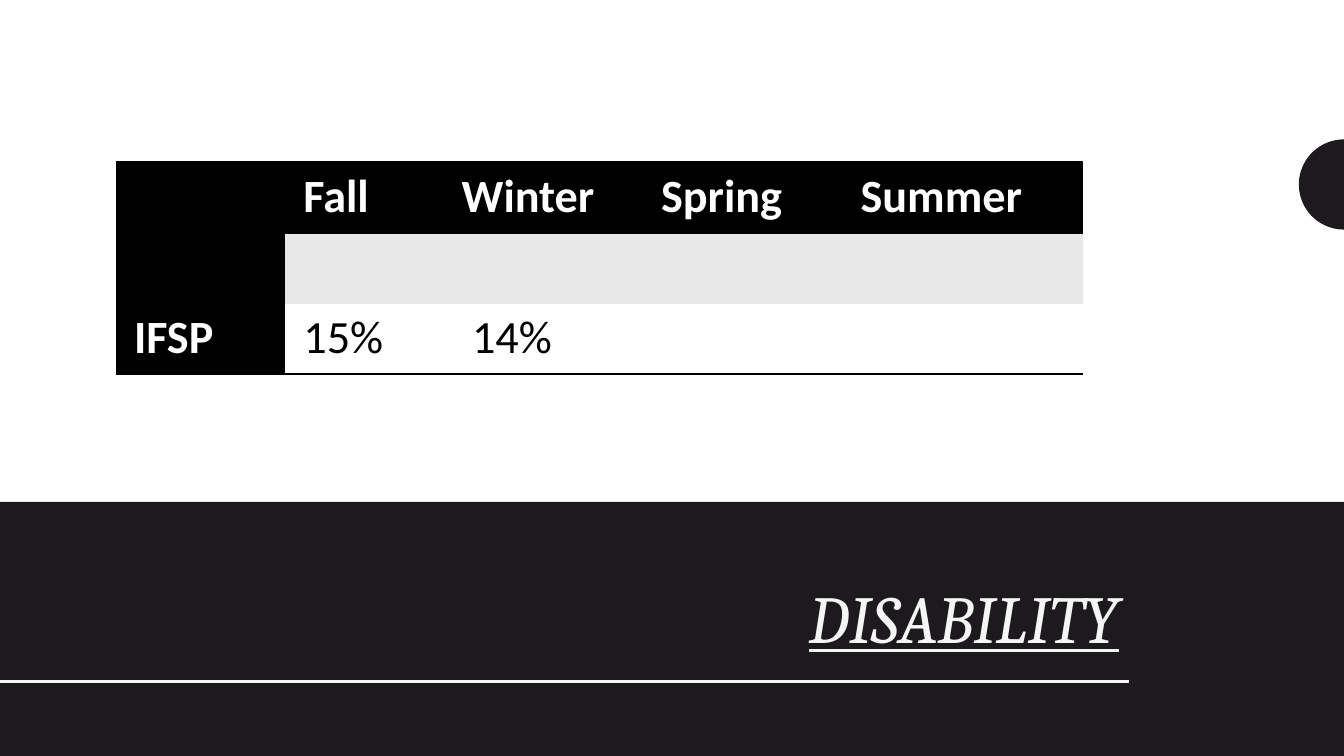
from math import cos, pi, sin

from lxml.etree import SubElement
from pptx import Presentation
from pptx.dml.color import RGBColor
from pptx.enum.shapes import MSO_CONNECTOR as CONN, MSO_SHAPE as SHAPE
from pptx.enum.text import MSO_ANCHOR as ANCHOR, PP_ALIGN as ALIGN
from pptx.oxml.ns import qn
from pptx.util import Pt

TITLE = "DISABILITY"
ROWS = [
    ["", "Fall", "Winter", "Spring", "Summer"],
    ["", "", "", "", ""],
    ["IFSP", "15%", " 14%", "", ""],
]
COL_WIDTHS = [121, 113, 142.5, 142.5, 171.5]
ROW_HEIGHT = 50.4
TABLE_LEFT, TABLE_TOP = 82.8, 116
SLIDE_W, SLIDE_H = 960, 540
BAND_TOP = 358.5
RULE_Y, RULE_RIGHT = 486.7, 806.4
DISC_Y, DISC_R = 131.8, 32.2
NO_STYLE = "{2D5ABB26-0587-4C30-8999-92F81FD0307C}"

BLACK = RGBColor(0x00, 0x00, 0x00)
WHITE = RGBColor(0xFF, 0xFF, 0xFF)
GREY = RGBColor(0xE7, 0xE7, 0xE7)
DARK = RGBColor(0x1D, 0x1A, 0x1D)
LIGHT = RGBColor(0xF5, 0xF5, 0xF5)


def paint(shape, color):
    shape.shadow.inherit = False
    shape.fill.solid()
    shape.fill.fore_color.rgb = color
    shape.line.fill.background()


def add_border(cell, side):
    tc_pr = cell._tc.get_or_add_tcPr()
    ln = tc_pr.makeelement(qn(f"a:{side}"), {"w": str(Pt(2))})
    SubElement(SubElement(ln, qn("a:solidFill")), qn("a:srgbClr"), val=str(BLACK))
    tc_pr.insert(0, ln)


def fill_cell(cell, text, row, col):
    header = row == 0 or col == 0
    cell.fill.solid()
    cell.fill.fore_color.rgb = BLACK if header else GREY if row == 1 else WHITE
    cell.margin_left = cell.margin_right = Pt(13)
    cell.margin_top, cell.margin_bottom = Pt(1.4), Pt(0)
    p = cell.text_frame.paragraphs[0]
    p.line_spacing = 1.07
    p.font.name, p.font.size, p.font.bold = "Calibri", Pt(33), header
    p.font.color.rgb = WHITE if header else BLACK
    if text:
        p.text = text
    if row != 1:
        add_border(cell, "lnB")
    if row == 0:
        add_border(cell, "lnT")


prs = Presentation()
prs.slide_width, prs.slide_height = Pt(SLIDE_W), Pt(SLIDE_H)
s = prs.slides.add_slide(prs.slide_layouts[5])
s.background.fill.solid()
s.background.fill.fore_color.rgb = WHITE

arc = [(SLIDE_W - DISC_R * sin(pi * i / 48), DISC_Y - DISC_R * cos(pi * i / 48))
       for i in range(49)]
points = [(Pt(x), Pt(y)) for x, y in arc]
disc = s.shapes.build_freeform(*points[0])
disc.add_line_segments(points[1:], close=True)
paint(disc.convert_to_shape(), DARK)

band = s.shapes.add_shape(SHAPE.RECTANGLE, 0, Pt(BAND_TOP), Pt(SLIDE_W), Pt(SLIDE_H - BAND_TOP))
paint(band, DARK)

title = s.shapes.title
title.left, title.top, title.width, title.height = Pt(50.4), Pt(409.7), Pt(756), Pt(70.6)
s.shapes._spTree.append(title._element)
tf = title.text_frame
tf.text = TITLE
tf.word_wrap = True
tf.vertical_anchor = ANCHOR.MIDDLE
p = tf.paragraphs[0]
p.alignment, p.line_spacing = ALIGN.RIGHT, 0.85
p.font.name, p.font.size = "Cambria", Pt(48)
p.font.italic = p.font.underline = True
p.font.color.rgb = LIGHT

rule = s.shapes.add_connector(CONN.STRAIGHT, Pt(RULE_RIGHT), Pt(RULE_Y), 0, Pt(RULE_Y))
rule.line.color.rgb, rule.line.width = LIGHT, Pt(2)
SubElement(rule._element.spPr, qn("a:effectLst"))

frame = s.shapes.add_table(len(ROWS), len(COL_WIDTHS), Pt(TABLE_LEFT), Pt(TABLE_TOP),
                           Pt(sum(COL_WIDTHS)), Pt(ROW_HEIGHT * len(ROWS)))
table = frame.table
table._tbl.tblPr.find(qn("a:tableStyleId")).text = NO_STYLE
table.horz_banding = False
table.first_col = True
for column, width in zip(table.columns, COL_WIDTHS):
    column.width = Pt(width)
for r, row in enumerate(ROWS):
    table.rows[r].height = Pt(ROW_HEIGHT)
    for c, text in enumerate(row):
        fill_cell(table.cell(r, c), text, r, c)

prs.save("out.pptx")
